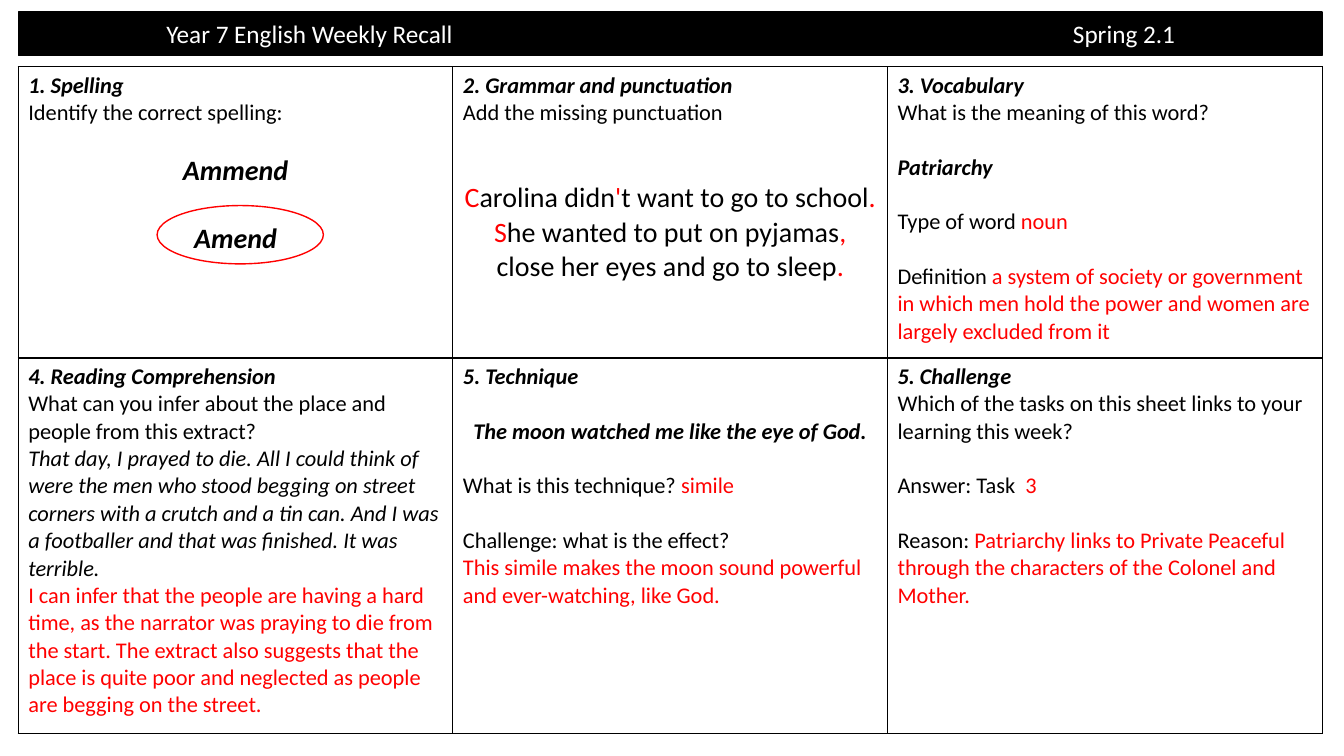
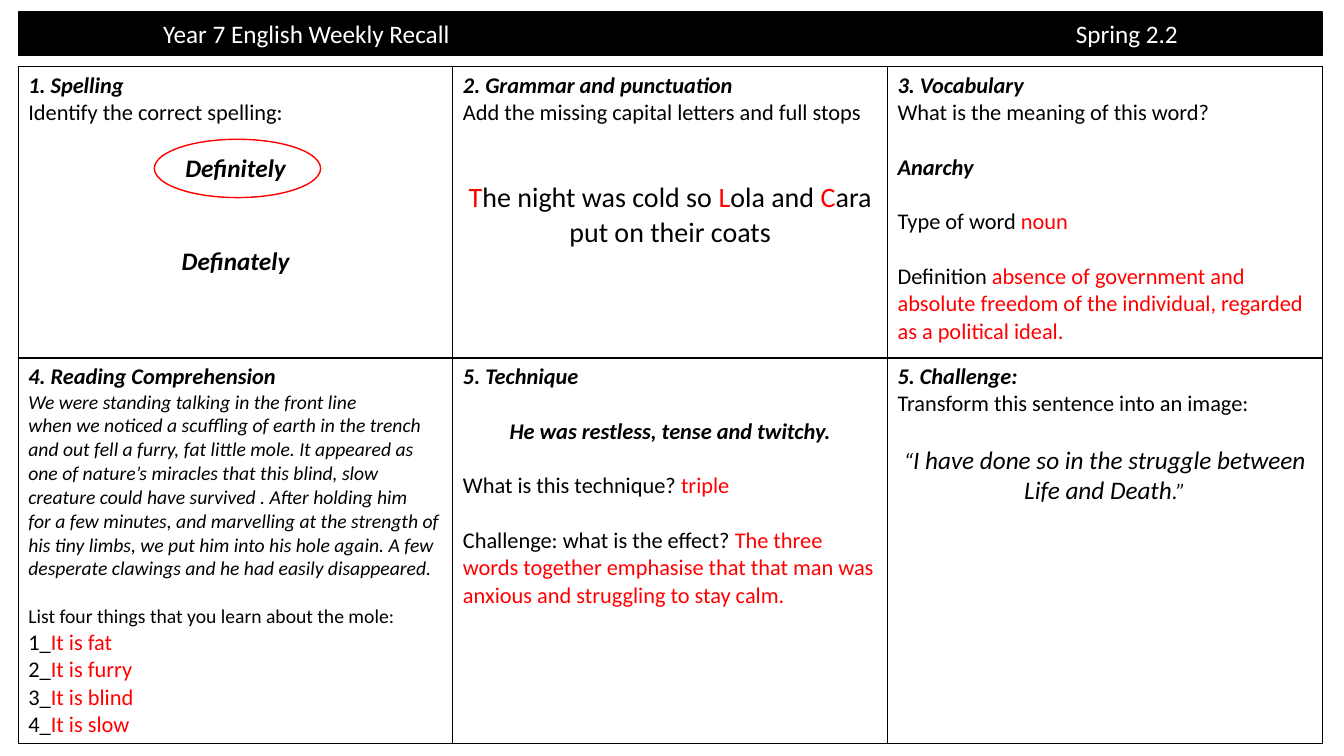
"""Build two weekly English recall sheets with their answers in red."""
import pptx
import pptx.dml.color
import pptx.enum.shapes
import pptx.enum.text
import pptx.oxml
import pptx.oxml.ns
import pptx.util

Cm, Pt = pptx.util.Cm, pptx.util.Pt
ALIGN = pptx.enum.text.PP_ALIGN
HUES = {"ink": "000000", "paper": "FFFFFF", "answer": "FF0000"}
FONT = "Calibri"
LEFT, WIDTH = 0.46, 32.86
BAR = (LEFT, 0.3, WIDTH, 1.1)
GRID = (LEFT, 1.68, WIDTH, 16.81)
ROWS = (7.34, 9.47)
COLS = 3
OVAL = (4.19, 1.47)
LINE = 1.22

HEAD = {"bold": True, "italic": True}
PLAIN = {}
NEXT = {"gap": 16}
ITEM = {**HEAD, **NEXT}
MID = {"align": ALIGN.CENTER}
EXTRACT = {"size": 14, "italic": True}


def vocab(word, kind, sense):
    """Return the lines of a vocabulary cell."""
    return [("3. Vocabulary", HEAD),
            ("What is the meaning of this word?", PLAIN),
            (word, ITEM),
            (f"Type of word |{kind}", NEXT),
            (f"Definition |{sense}", NEXT)]


def device(quote, name, *effect):
    """Return the lines of a technique cell."""
    return [("5. Technique", HEAD),
            (quote, {**ITEM, **MID}),
            (f"What is this technique? |{name}", NEXT),
            (effect[0], NEXT)] + [(line, PLAIN) for line in effect[1:]]


def spell(size, space, *words):
    """Return the lines of a spelling cell."""
    return [("1. Spelling", HEAD),
            ("Identify the correct spelling:", PLAIN),
            (words[0], {**ITEM, **MID, "size": size}),
            (words[1], {**HEAD, **MID, "size": size, "gap": space})]


def grammar(task, text):
    """Return the lines of a grammar cell."""
    return [("2. Grammar and punctuation", HEAD),
            (task, PLAIN),
            (text, {**MID, "size": 20, "gap": 32})]


WEEKS = [
    {"title": "Year 7 English Weekly Recall\tSpring 2.1",
     "inset": 3.73, "tab": 22.85, "oval": (3.96, 5.18),
     "cells": [
         spell(20, 20, "Ammend", "Amend"),
         grammar("Add the missing punctuation",
                 "|C|arolina didn|'|t want to go to school|. S|he wanted to "
                 "put on pyjamas|,| close her eyes and go to sleep|."),
         vocab("Patriarchy", "noun",
               "a system of society or government in which men hold the "
               "power and women are largely excluded from it"),
         [("4. Reading Comprehension", HEAD),
          ("What can you infer about the place and people from this "
           "extract?", PLAIN),
          ("That day, I prayed to die. All I could think of were the men who "
           "stood begging on street corners with a crutch and a tin can. And "
           "I was a footballer and that was finished. It was terrible.",
           {"italic": True}),
          ("|I can infer that the people are having a hard time, as the "
           "narrator was praying to die from the start. The extract also "
           "suggests that the place is quite poor and neglected as people "
           "are begging on the street.", PLAIN)],
         device("The moon watched me like the eye of God.", "simile",
                "Challenge: what is the effect?",
                "|This simile makes the moon sound powerful and "
                "ever-watching, like God."),
         [("5. Challenge", HEAD),
          ("Which of the tasks on this sheet links to your learning this "
           "week?", PLAIN),
          ("Answer: Task  |3", NEXT),
          ("Reason: |Patriarchy links to Private Peaceful through the "
           "characters of the Colonel and Mother.", NEXT)]]},
    {"title": "Year 7 English Weekly Recall\tSpring 2.2",
     "inset": 3.65, "tab": 23, "oval": (3.89, 3.51),
     "cells": [
         spell(18, 36, "Definitely", "Definately"),
         grammar("Add the missing capital letters and full stops",
                 "|T|he night was cold so |L|ola and |C|ara put on their "
                 "coats"),
         vocab("Anarchy", "noun",
               "absence of government and absolute freedom of the "
               "individual, regarded as a political ideal."),
         [("4. Reading Comprehension", HEAD),
          ("We were standing talking in the front line", EXTRACT),
          ("when we noticed a scuffling of earth in the trench and out fell "
           "a furry, fat little mole. It appeared as one of nature’s "
           "miracles that this blind, slow creature could have survived . "
           "After holding him", EXTRACT),
          ("for a few minutes, and marvelling at the strength of his tiny "
           "limbs, we put him into his hole again. A few desperate clawings "
           "and he had easily disappeared.", EXTRACT),
          ("List four things that you learn about the mole:",
           {"size": 14, "gap": 14})]
         + [(f"{rank}_|It is {trait}", PLAIN) for rank, trait
            in enumerate(("fat", "furry", "blind", "slow"), 1)],
         device("He was restless, tense and twitchy.", "triple",
                "Challenge: what is the effect? |The three words together "
                "emphasise that that man was anxious and struggling to stay "
                "calm."),
         [("5. Challenge:", HEAD),
          ("Transform this sentence into an image:", PLAIN),
          ("|“|I have done so in the struggle between Life and Death|.”",
           {**MID, **NEXT, "italic": True, "size": 18,
            "mark": "ink", "small": 16})]]},
]


def paint(hue):
    """Return the named colour."""
    return pptx.dml.color.RGBColor.from_string(HUES[hue])


def write(para, text, size=16, bold=False, italic=False, hue="ink",
          align=ALIGN.LEFT, gap=0, mark="answer", small=None):
    """Fill a paragraph; every second part between bars is marked."""
    para.alignment = align
    para.space_before = Pt(round(gap * LINE, 1))
    for rank, part in enumerate(text.split("|")):
        if not part:
            continue
        run = para.add_run()
        run.text = part
        font = run.font
        odd = rank % 2
        font.name, font.bold, font.italic = FONT, bold, italic
        font.size = Pt(small if odd and small else size)
        font.color.rgb = paint(mark if odd else hue)


def edge(cell):
    """Draw the four borders of a cell."""
    props = cell._tc.get_or_add_tcPr()
    space = pptx.oxml.ns.nsdecls("a")
    for side in "LRTB":
        props.append(pptx.oxml.parse_xml(
            f'<a:ln{side} {space} w="12700"><a:solidFill>'
            f'<a:srgbClr val="{HUES["ink"]}"/></a:solidFill></a:ln{side}>'))
    cell.fill.background()


def banner(slide, week):
    """Turn the title into the black bar."""
    bar = slide.shapes.title
    bar.left, bar.top, bar.width, bar.height = map(Cm, BAR)
    bar.fill.solid()
    bar.fill.fore_color.rgb = bar.line.color.rgb = paint("ink")
    bar.line.width = Pt(1)
    frame = bar.text_frame
    frame.auto_size = pptx.enum.text.MSO_AUTO_SIZE.NONE
    frame.vertical_anchor = pptx.enum.text.MSO_ANCHOR.MIDDLE
    frame.margin_left = Cm(week["inset"])
    para = frame.paragraphs[0]
    write(para, week["title"], size=18, hue="paper")
    para._p.get_or_add_pPr().append(pptx.oxml.parse_xml(
        f'<a:tabLst {pptx.oxml.ns.nsdecls("a")}>'
        f'<a:tab pos="{Cm(week["tab"])}" algn="l"/></a:tabLst>'))


def sheet(slide, week):
    """Add the grid of tasks and ring the right spelling."""
    shapes = slide.shapes
    table = shapes.add_table(len(ROWS), COLS, *map(Cm, GRID)).table
    table.first_row = table.horz_banding = False
    for row, height in zip(table.rows, ROWS):
        row.height = Cm(height)
    for rank, lines in enumerate(week["cells"]):
        cell = table.cell(*divmod(rank, COLS))
        edge(cell)
        frame = cell.text_frame
        for spot, (text, style) in enumerate(lines):
            para = frame.add_paragraph() if spot else frame.paragraphs[0]
            write(para, text, **style)
    ring = shapes.add_shape(pptx.enum.shapes.MSO_SHAPE.OVAL,
                            *map(Cm, week["oval"] + OVAL))
    ring.shadow.inherit = False
    ring.fill.background()
    ring.line.color.rgb = paint("answer")
    ring.line.width = Pt(1)


def main():
    """Build and save the deck."""
    deck = pptx.Presentation()
    deck.slide_width, deck.slide_height = Cm(33.87), Cm(19.05)
    for week in WEEKS:
        slide = deck.slides.add_slide(deck.slide_layouts[5])
        banner(slide, week)
        sheet(slide, week)
    deck.save("out.pptx")


if __name__ == "__main__":
    main()
